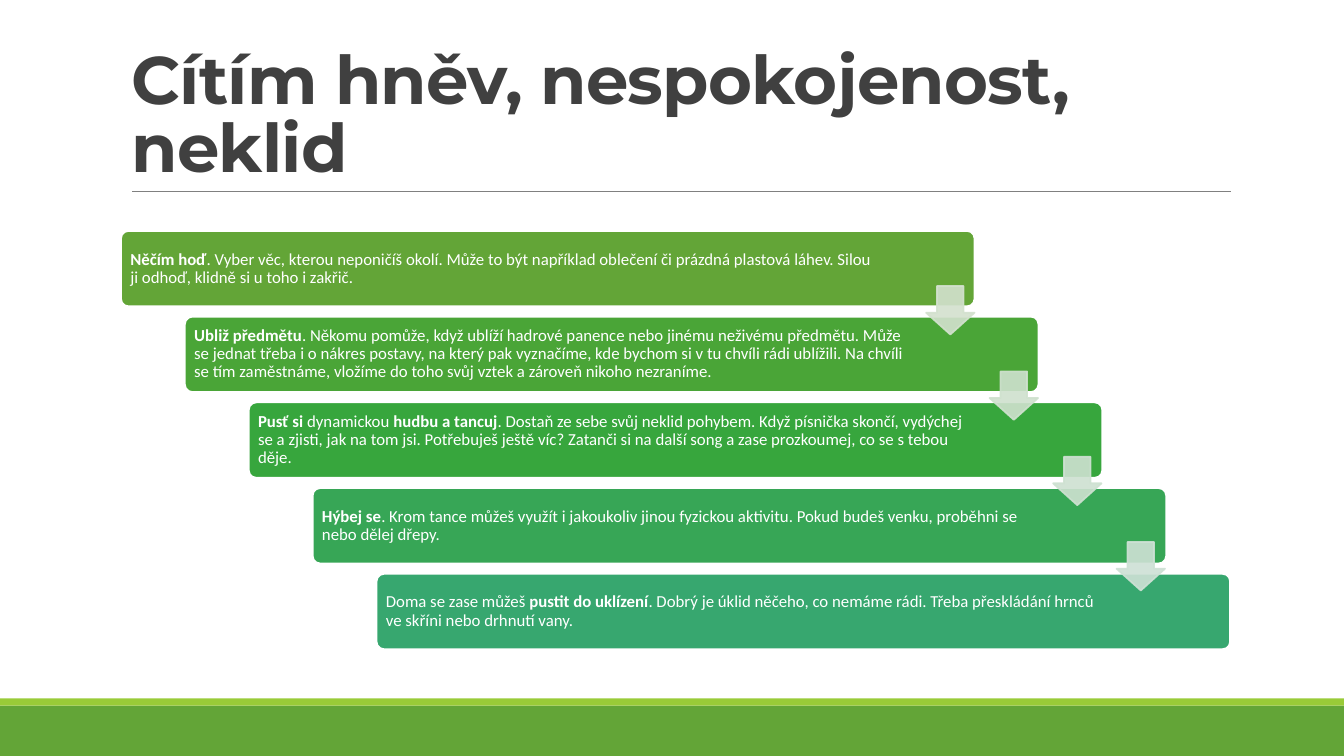
from lxml import etree
from pptx import Presentation
from pptx.dml.color import RGBColor
from pptx.enum.shapes import MSO_CONNECTOR as Connector, MSO_SHAPE as Shape
from pptx.enum.text import MSO_ANCHOR as Anchor, MSO_AUTO_SIZE as AutoSize, PP_ALIGN as Align
from pptx.oxml.ns import qn
from pptx.util import Cm, Pt


def color(value):
    return RGBColor.from_string(value)


def add_block(kind, left, top, width, height, fill, line=None):
    shape = slide.shapes.add_shape(kind, Cm(left), Cm(top), Cm(width), Cm(height))
    shape.shadow.inherit = False
    shape.fill.solid()
    shape.fill.fore_color.rgb = color(fill)
    if line:
        shape.line.color.rgb = color(line)
        shape.line.width = Pt(1.25)
    else:
        shape.line.fill.background()
    return shape


presentation = Presentation()
presentation.slide_width = Cm(33.87)
presentation.slide_height = Cm(19.05)
slide = presentation.slides.add_slide(presentation.slide_layouts[5])

# Footer bands
add_block(Shape.RECTANGLE, 0, 17.78, 33.87, 1.27, "63A537")
add_block(Shape.RECTANGLE, 0, 17.6, 33.87, 0.18, "99CB38")

# Rule under the title
rule = slide.shapes.add_connector(Connector.STRAIGHT, Cm(3.33), Cm(4.83), Cm(31.01), Cm(4.83))
rule.line.color.rgb = color("808080")
rule.line.width = Pt(0.5)
etree.SubElement(rule._element.spPr, qn("a:effectLst"))

# Title
title = slide.shapes.title
title_place = {"left": Cm(3.05), "top": Cm(0.79), "width": Cm(27.94), "height": Cm(4.04)}
for name, value in title_place.items():
    setattr(title, name, value)
title_frame = title.text_frame
title_frame.text = "Cítím hněv, nespokojenost, neklid"
title_frame.auto_size = AutoSize.NONE
title_frame.word_wrap = True
title_frame.vertical_anchor = Anchor.BOTTOM
paragraph = title_frame.paragraphs[0]
paragraph.alignment = Align.LEFT
paragraph.line_spacing = 0.85
run = paragraph.runs[0]
for name, value in {"name": "Montserrat", "size": Pt(48), "bold": True}.items():
    setattr(run.font, name, value)
run.font.color.rgb = color("404040")
run._r.get_or_add_rPr().set("spc", "-50")

# Staircase of steps: fill and text, with bold parts between asterisks
steps = [
    ("63A537", "*Něčím hoď*. Vyber věc, kterou neponičíš okolí. Může to být například oblečení "
     "či prázdná plastová láhev. Silou ji odhoď, klidně si u toho i zakřič."),
    ("4AA537", "*Ubliž předmětu*. Někomu pomůže, když ublíží hadrové panence nebo jinému neživému "
     "předmětu. Může se jednat třeba i o nákres postavy, na který pak vyznačíme, kde bychom si "
     "v tu chvíli rádi ublížili. Na chvíli se tím zaměstnáme, vložíme do toho svůj vztek "
     "a zároveň nikoho nezraníme."),
    ("37A63D", "*Pusť si* dynamickou *hudbu a tancuj*. Dostaň ze sebe svůj neklid pohybem. Když "
     "písnička skončí, vydýchej se a zjisti, jak na tom jsi. Potřebuješ ještě víc? Zatanči si "
     "na další song a zase prozkoumej, co se s tebou děje."),
    ("37A656", "*Hýbej se*. Krom tance můžeš využít i jakoukoliv jinou fyzickou aktivitu. Pokud "
     "budeš venku, proběhni se nebo dělej dřepy."),
    ("37A76F", "Doma se zase můžeš *pustit do uklízení*. Dobrý je úklid něčeho, co nemáme rádi. "
     "Třeba přeskládání hrnců ve skříni nebo drhnutí vany."),
]
for index, (fill, text) in enumerate(steps):
    bar = add_block(Shape.ROUNDED_RECTANGLE, 3.05 + 1.61 * index, 5.82 + 2.16 * index,
                    21.51, 1.9, fill, "FFFFFF")
    bar.adjustments[0] = 0.1
    frame_format = {
        "margin_left": Cm(0.18), "margin_right": Cm(3.02 if index else 2.34),
        "margin_top": Cm(0.13), "margin_bottom": Cm(0.13),
        "vertical_anchor": Anchor.MIDDLE, "word_wrap": True,
    }
    for name, value in frame_format.items():
        setattr(bar.text_frame, name, value)
    paragraph = bar.text_frame.paragraphs[0]
    paragraph.alignment = Align.LEFT
    paragraph.line_spacing = 0.9
    for part_index, part in enumerate(text.split("*")):
        if not part:
            continue
        run = paragraph.add_run()
        run.text = part
        run_format = {"name": "Calibri", "size": Pt(12), "bold": part_index % 2 == 1}
        for name, value in run_format.items():
            setattr(run.font, name, value)
        run.font.color.rgb = color("FFFFFF")

# Translucent arrows from step to step
for index, tint in enumerate(["D3E1CE", "CFE1CE", "CEE1D1", "CEE1D5"]):
    arrow = add_block(Shape.DOWN_ARROW, 23.34 + 1.6 * index, 7.21 + 2.15 * index,
                      1.22, 1.22, tint, tint)
    arrow.adjustments[0] = 0.55
    arrow.adjustments[1] = 0.45
    for tint_element in arrow._element.spPr.iter(qn("a:srgbClr")):
        etree.SubElement(tint_element, qn("a:alpha"), val="90000")

presentation.save("out.pptx")
